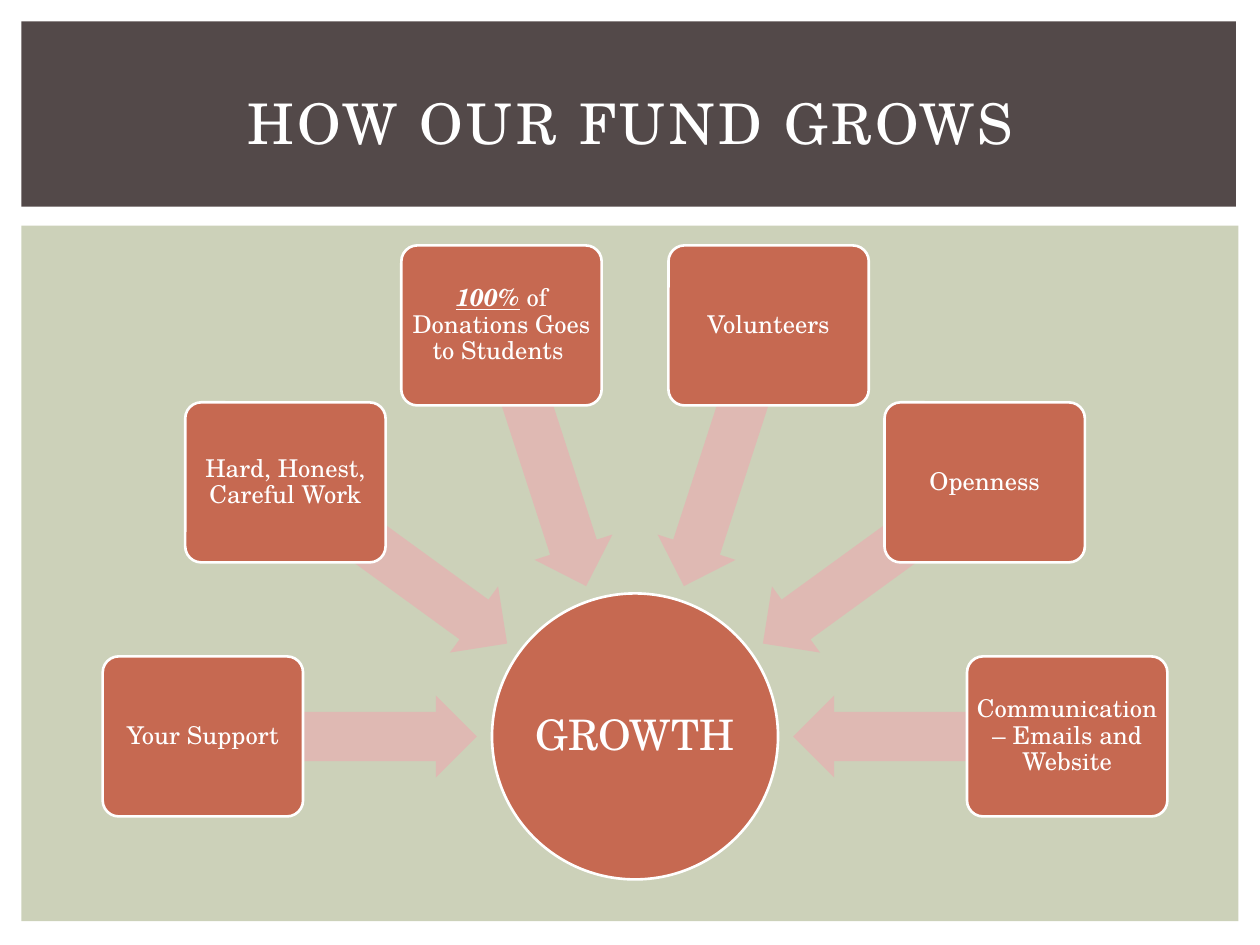
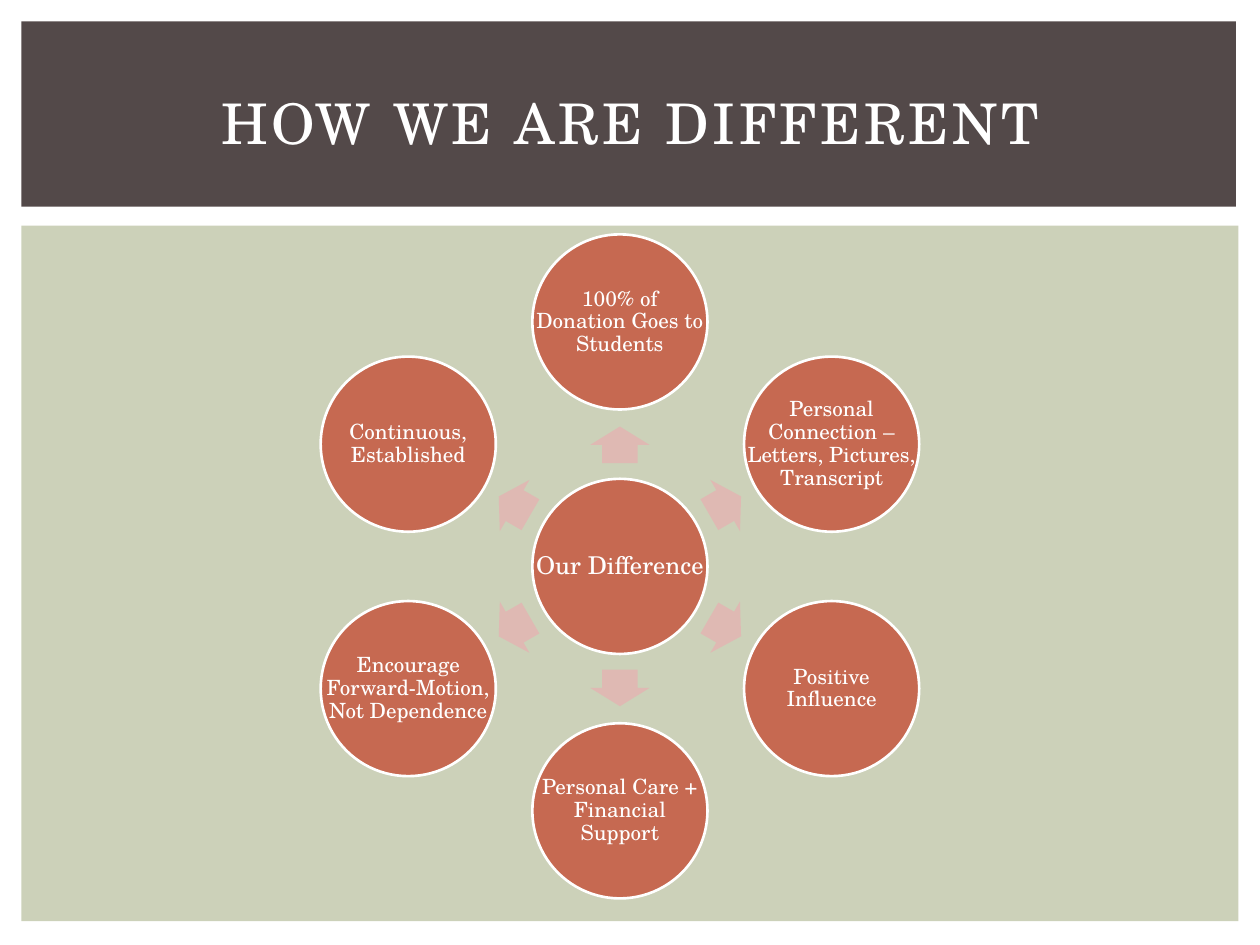
from dataclasses import dataclass
from math import cos, radians, sin

from pptx import Presentation
from pptx.dml.color import RGBColor
from pptx.enum.shapes import MSO_SHAPE as Shape
from pptx.enum.text import MSO_ANCHOR as Anchor, PP_ALIGN as Align
from pptx.util import Inches, Pt

COLUMNS, ROWS = 100, 75
FONT = "TeX Gyre Schola"
WHITE, BAND, PANEL = "FFFFFF", "534949", "CCD1B9"
NODE, ARROW = "C66951", "DFB9B3"


@dataclass(frozen=True)
class Box:
    left: float
    top: float
    width: float
    height: float


@dataclass(frozen=True)
class Style:
    kind: Shape
    width: float
    height: float
    size: int = 12
    inset: float = 0.2


@dataclass(frozen=True)
class Spoke:
    text: str
    emphasis: str = ""


@dataclass(frozen=True)
class Radial:
    title: str
    center: tuple[float, float]
    hub_text: str
    hub: Style
    node: Style
    arrow: Style
    node_radius: float
    arrow_radius: float
    start: int
    step: int
    spokes: tuple[Spoke, ...]


PANEL_BOX = Box(1.7, 17.9, 96.6, 55.2)
BAND_BOX = Box(1.7, 1.7, 96.4, 14.7)
TITLE_BOX = Box(4.2, 3.9, 91.7, 11.5)

GROWTH = Radial(
    title="HOW OUR FUND GROWS",
    center=(50.4, 58.45),
    hub_text="GROWTH",
    hub=Style(Shape.OVAL, 22.7, 22.7, 24),
    node=Style(Shape.ROUNDED_RECTANGLE, 15.9, 12.7, 14, 0),
    arrow=Style(Shape.LEFT_ARROW, 21.7, 6.5),
    node_radius=34.3,
    arrow_radius=23.4,
    start=180,
    step=36,
    spokes=(
        Spoke("Your Support"),
        Spoke("Hard, Honest, Careful Work"),
        Spoke(" of Donations Goes to Students ", "100%"),
        Spoke("Volunteers"),
        Spoke("Openness"),
        Spoke("Communication – Emails and Website"),
    ),
)

DIFFERENCE = Radial(
    title="HOW WE ARE DIFFERENT",
    center=(49.2, 44.95),
    hub_text="Our Difference",
    hub=Style(Shape.OVAL, 13.9, 13.9, 14),
    node=Style(Shape.OVAL, 13.9, 13.9, 12),
    arrow=Style(Shape.RIGHT_ARROW, 2.9, 4.7),
    node_radius=19.4,
    arrow_radius=9.65,
    start=270,
    step=60,
    spokes=(
        Spoke("100% of Donation Goes to Students"),
        Spoke("Personal Connection – Letters, Pictures, Transcript"),
        Spoke("Positive Influence"),
        Spoke("Personal Care + Financial Support"),
        Spoke("Encourage Forward-Motion, Not Dependence"),
        Spoke("Continuous, Established"),
    ),
)


def color(value: str) -> RGBColor:
    return RGBColor.from_string(value)


def cells(count: float) -> int:
    return Inches(count * 10 / COLUMNS)


def place(box: Box) -> tuple[int, ...]:
    return tuple(cells(n) for n in (box.left, box.top, box.width, box.height))


def around(center: tuple[float, float], style: Style) -> Box:
    x, y = center
    return Box(x - style.width / 2, y - style.height / 2, style.width, style.height)


def polar(center: tuple[float, float], radius: float, angle: float) -> tuple[float, float]:
    turn = radians(angle)
    return center[0] + radius * cos(turn), center[1] + radius * sin(turn)


def format_font(font, size: int) -> None:
    font.name, font.size = FONT, Pt(size)
    font.color.rgb = color(WHITE)


def add_filled(slide, kind: Shape, box: Box, fill: str, outlined: bool = False):
    sp = slide.shapes.add_shape(kind, *place(box))
    sp.shadow.inherit = False
    sp.fill.solid()
    sp.fill.fore_color.rgb = color(fill)
    if outlined:
        sp.line.color.rgb = color(WHITE)
        sp.line.width = Pt(1.5)
    else:
        sp.line.fill.background()
    return sp


def add_title(slide, text: str) -> None:
    title = slide.shapes.title
    slide.shapes._spTree.append(title._element)
    title.left, title.top, title.width, title.height = place(TITLE_BOX)
    tf = title.text_frame
    tf.text = text
    tf.vertical_anchor = Anchor.MIDDLE
    p = tf.paragraphs[0]
    p.alignment = Align.CENTER
    format_font(p.font, 32)
    p.runs[0]._r.get_or_add_rPr().set("spc", "200")


def add_node(slide, center: tuple[float, float], style: Style, spoke: Spoke) -> None:
    """Draw a node; a circle takes a full-width text box, as its own text area is narrow."""
    box = around(center, style)
    sp = add_filled(slide, style.kind, box, NODE, outlined=True)
    if style.kind == Shape.OVAL:
        sp = slide.shapes.add_textbox(*place(box))
    else:
        sp.adjustments[0] = 0.1
    tf = sp.text_frame
    tf.word_wrap = True
    tf.vertical_anchor = Anchor.MIDDLE
    tf.margin_left = tf.margin_right = tf.margin_top = tf.margin_bottom = cells(style.inset)
    p = tf.paragraphs[0]
    p.alignment, p.line_spacing = Align.CENTER, 0.9
    format_font(p.font, style.size)
    if spoke.emphasis:
        r = p.add_run()
        r.text = spoke.emphasis
        r.font.bold = r.font.italic = r.font.underline = True
    p.add_run().text = spoke.text


def add_arrow(slide, center: tuple[float, float], style: Style, angle: float) -> None:
    sp = add_filled(slide, style.kind, around(center, style), ARROW)
    sp.adjustments[0], sp.adjustments[1] = 0.6, 0.5
    sp.rotation = angle


def add_radial_slide(prs, radial: Radial) -> None:
    slide = prs.slides.add_slide(prs.slide_layouts.get_by_name("Title Only"))
    add_filled(slide, Shape.RECTANGLE, PANEL_BOX, PANEL)
    add_filled(slide, Shape.RECTANGLE, BAND_BOX, BAND)
    add_title(slide, radial.title)
    add_node(slide, radial.center, radial.hub, Spoke(radial.hub_text))
    for i, spoke in enumerate(radial.spokes):
        angle = (radial.start + i * radial.step) % 360
        add_arrow(slide, polar(radial.center, radial.arrow_radius, angle), radial.arrow, angle)
        add_node(slide, polar(radial.center, radial.node_radius, angle), radial.node, spoke)


def main() -> None:
    prs = Presentation()
    prs.slide_width, prs.slide_height = cells(COLUMNS), cells(ROWS)
    for radial in (GROWTH, DIFFERENCE):
        add_radial_slide(prs, radial)
    prs.save("out.pptx")


if __name__ == "__main__":
    main()
